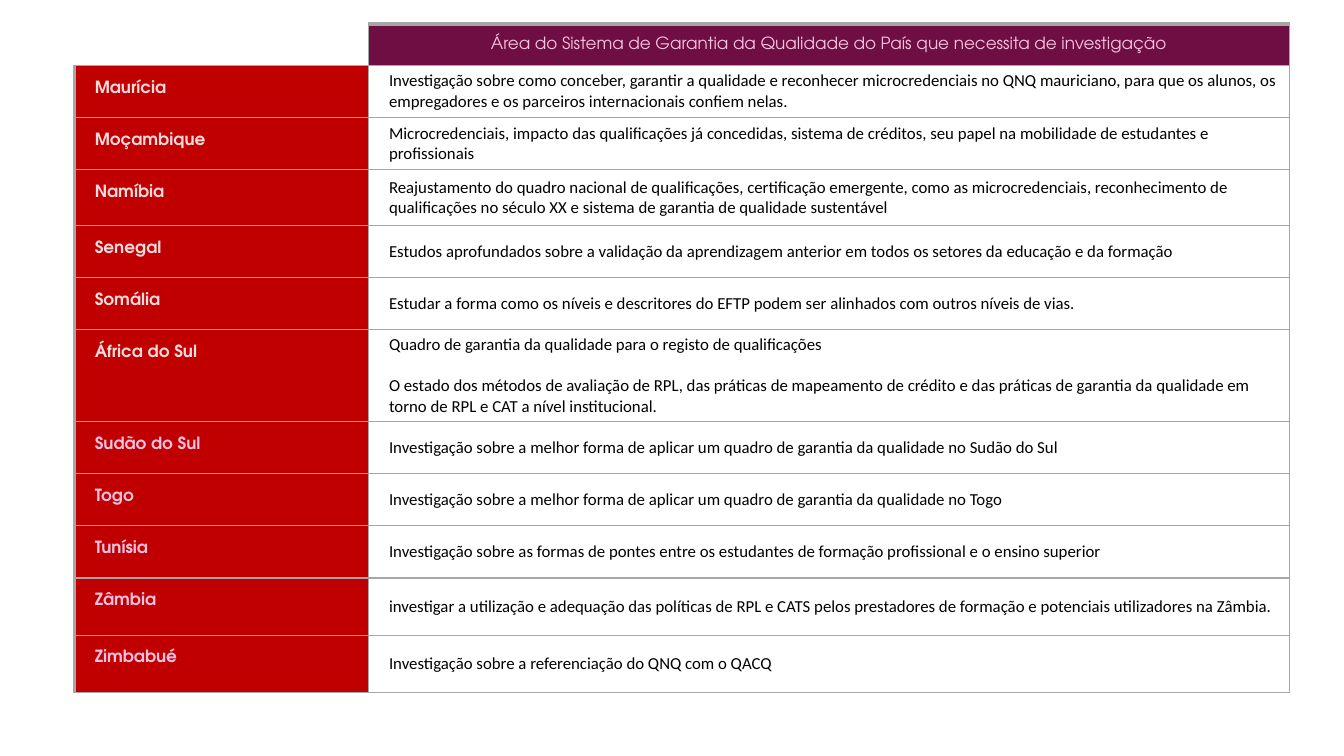
from dataclasses import dataclass

from lxml.etree import SubElement
from pptx import Presentation
from pptx.dml.color import RGBColor
from pptx.enum.text import MSO_ANCHOR, PP_ALIGN
from pptx.oxml.ns import qn
from pptx.util import Pt


@dataclass(frozen=True)
class Theme:
    red: str = "C00000"
    plum: str = "6F0E42"
    white: str = "FFFFFF"
    black: str = "000000"
    gray: str = "A6A6A6"
    blush: str = "FADBDE"
    pink: str = "F7C2DF"
    head: str = "TeX Gyre Adventor"
    body: str = "Calibri"
    size: float = 12
    thin: float = 1
    thick: float = 3


THEME = Theme()
LEFT, TOP = 53.3, 17.3
COLS = (210.2, 657.4)
HEAD_TALL = 29.5
GAP = 14.6
HEADER = "Área do Sistema de Garantia da Qualidade do País que necessita de investigação"
ROWS = (
    ("Maurícia", 37.2, THEME.blush, "Investigação sobre como conceber, garantir a qualidade e reconhecer microcredenciais no QNQ mauriciano, para que os alunos, os empregadores e os parceiros internacionais confiem nelas."),
    ("Moçambique", 37.2, THEME.blush, "Microcredenciais, impacto das qualificações já concedidas, sistema de créditos, seu papel na mobilidade de estudantes e profissionais"),
    ("Namíbia", 40, THEME.blush, "Reajustamento do quadro nacional de qualificações, certificação emergente, como as microcredenciais, reconhecimento de qualificações no século XX e sistema de garantia de qualidade sustentável"),
    ("Senegal", 37.2, THEME.blush, "Estudos aprofundados sobre a validação da aprendizagem anterior em todos os setores da educação e da formação"),
    ("Somália", 37.2, THEME.blush, "Estudar a forma como os níveis e descritores do EFTP podem ser alinhados com outros níveis de vias."),
    ("África do Sul", 64.3, THEME.blush, "Quadro de garantia da qualidade para o registo de qualificações\nO estado dos métodos de avaliação de RPL, das práticas de mapeamento de crédito e das práticas de garantia da qualidade em torno de RPL e CAT a nível institucional."),
    ("Sudão do Sul", 37.2, THEME.pink, "Investigação sobre a melhor forma de aplicar um quadro de garantia da qualidade no Sudão do Sul"),
    ("Togo", 37.2, THEME.pink, "Investigação sobre a melhor forma de aplicar um quadro de garantia da qualidade no Togo"),
    ("Tunísia", 37.2, THEME.pink, "Investigação sobre as formas de pontes entre os estudantes de formação profissional e o ensino superior"),
    ("Zâmbia", 40.9, THEME.pink, "investigar a utilização e adequação das políticas de RPL e CATS pelos prestadores de formação e potenciais utilizadores na Zâmbia."),
    ("Zimbabué", 40.9, THEME.pink, "Investigação sobre a referenciação do QNQ com o QACQ"),
)


def set_edges(cell, **widths):
    props = cell._tc.get_or_add_tcPr()
    for spot, side in enumerate("LRTB"):
        width = widths.get(side, THEME.thin)
        line = SubElement(props, qn(f"a:ln{side}"), w=str(Pt(width)))
        if width:
            fill = SubElement(line, qn("a:solidFill"))
            SubElement(fill, qn("a:srgbClr"), val=THEME.gray)
        else:
            SubElement(line, qn("a:noFill"))
        props.insert(spot, line)


def set_cell(cell, text, fill, color, font, bold=False, align=PP_ALIGN.LEFT):
    cell.fill.solid()
    cell.fill.fore_color.rgb = RGBColor.from_string(fill)
    cell.text_frame.text = text
    for rank, para in enumerate(cell.text_frame.paragraphs):
        para.alignment = align
        if rank:
            para.space_before = Pt(GAP)
        for run in para.runs:
            run.font.name = font
            run.font.size = Pt(THEME.size)
            run.font.bold = bold
            run.font.color.rgb = RGBColor.from_string(color)


def set_inset(cell, top, anchor):
    cell.margin_left = Pt(14.4)
    cell.margin_right = Pt(7.2)
    cell.margin_top = Pt(top)
    cell.margin_bottom = Pt(3.6)
    cell.vertical_anchor = anchor


def add_grid(slide):
    heights = [HEAD_TALL] + [row[1] for row in ROWS]
    frame = slide.shapes.add_table(len(heights), len(COLS), Pt(LEFT), Pt(TOP),
                                   Pt(sum(COLS)), Pt(sum(heights)))
    table = frame.table
    table.first_row = False
    table.horz_banding = False
    for column, width in zip(table.columns, COLS):
        column.width = Pt(width)
    for row, height in zip(table.rows, heights):
        row.height = Pt(height)
    return table


def fill_head(table):
    blank, title = table.cell(0, 0), table.cell(0, 1)
    blank.fill.background()
    blank.margin_top = blank.margin_bottom = Pt(0)
    set_edges(blank, L=0, T=0)
    set_cell(title, HEADER, THEME.plum, THEME.pink, THEME.head, align=PP_ALIGN.CENTER)
    title.vertical_anchor = MSO_ANCHOR.MIDDLE
    set_edges(title, T=THEME.thick)


def fill_row(table, index, name, color, text):
    land, topic = table.cell(index, 0), table.cell(index, 1)
    set_cell(land, name, THEME.red, color, THEME.head, bold=True)
    set_inset(land, 10.8, MSO_ANCHOR.TOP)
    set_edges(land, L=THEME.thick)
    set_cell(topic, text, THEME.white, THEME.black, THEME.body)
    set_inset(topic, 3.6, MSO_ANCHOR.MIDDLE)
    set_edges(topic)


def main():
    deck = Presentation()
    deck.slide_width, deck.slide_height = Pt(960), Pt(540)
    slide = deck.slides.add_slide(deck.slide_layouts[6])
    table = add_grid(slide)
    fill_head(table)
    for index, (name, _, color, text) in enumerate(ROWS, 1):
        fill_row(table, index, name, color, text)
    deck.save("out.pptx")


if __name__ == "__main__":
    main()
